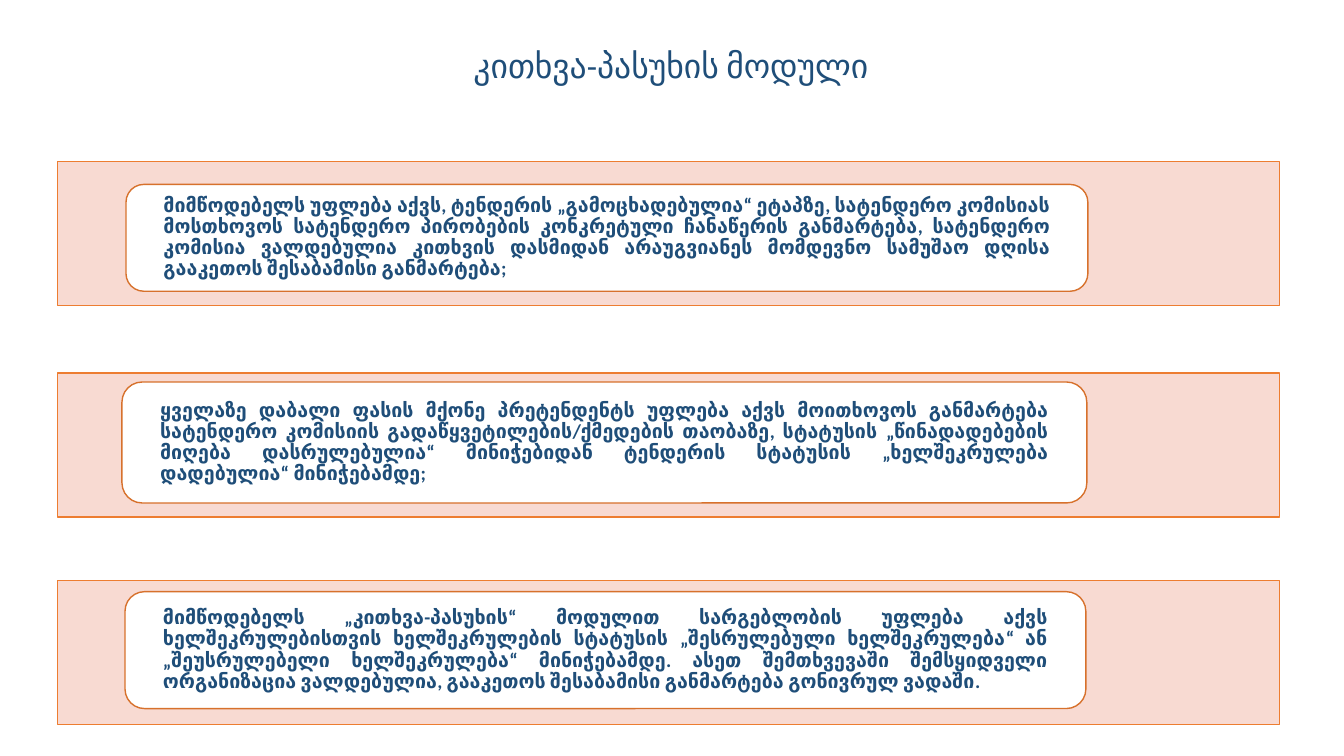
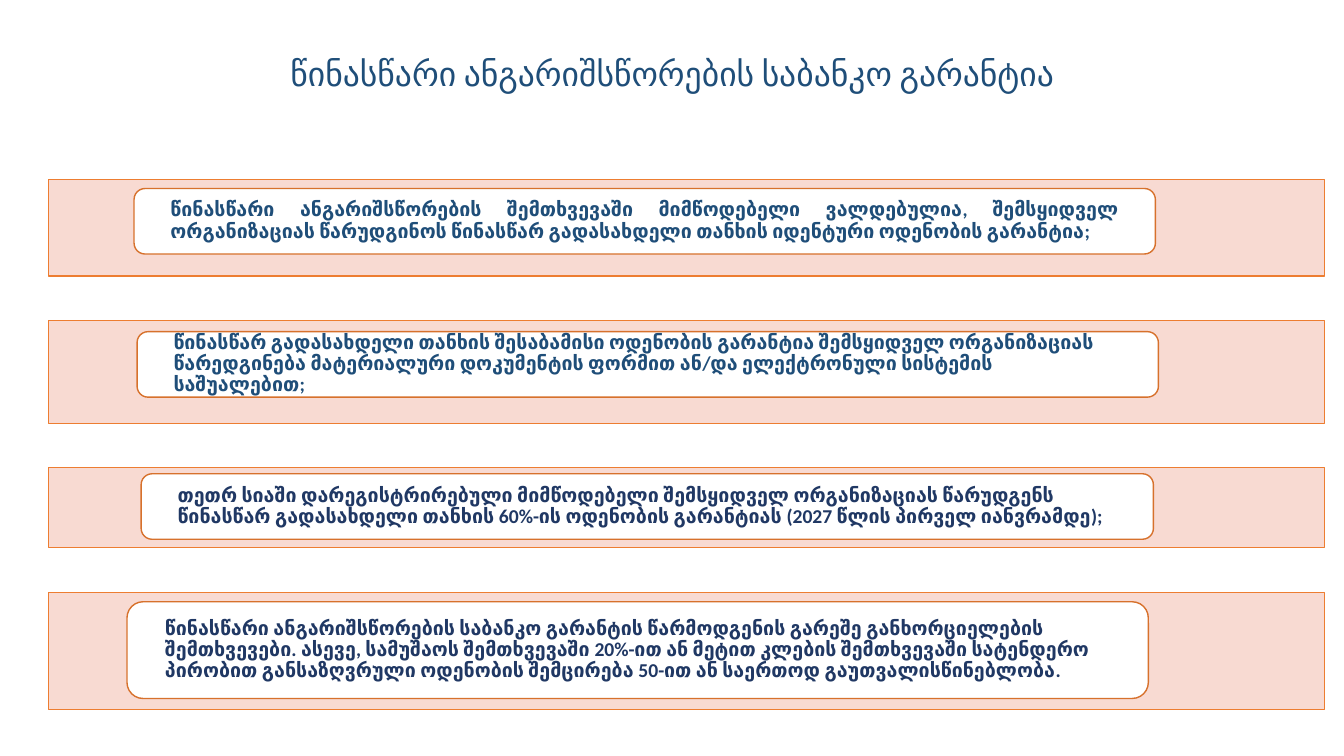
from lxml import etree
from pptx import Presentation
from pptx.dml.color import RGBColor
from pptx.enum import shapes, text
from pptx.oxml.ns import qn
from pptx.util import Inches, Pt

FONT = "Calibri"
NAVY, INDIGO = "1F4E79", "203864"
PEACH, ORANGE, RUST, WHITE = "F8D7CE", "ED7D31", "D7712C", "FFFFFF"
JUSTIFY, LEFT = text.PP_ALIGN.JUSTIFY, text.PP_ALIGN.LEFT
RECT, ROUNDED = shapes.MSO_SHAPE.RECTANGLE, shapes.MSO_SHAPE.ROUNDED_RECTANGLE


def add_panel(slide, kind, box, fill, line):
    panel = slide.shapes.add_shape(kind, *map(Inches, box))
    panel.shadow.inherit = False
    panel.fill.solid()
    panel.fill.fore_color.rgb = RGBColor.from_string(fill)
    panel.line.color.rgb = RGBColor.from_string(line)
    panel.line.width = Pt(1)
    return panel


def write(shape, wording, size, color, align, bold=False):
    frame = shape.text_frame
    frame.word_wrap = True
    frame.vertical_anchor = text.MSO_ANCHOR.MIDDLE
    frame.text = wording
    paragraph = frame.paragraphs[0]
    paragraph.alignment = align
    paragraph.line_spacing = 0.9
    font = paragraph.runs[0].font
    font.name, font.size, font.bold = FONT, Pt(size), bold
    font.color.rgb = RGBColor.from_string(color)


# Each row: band top, band height, card box, text colour, alignment, wording
pages = [
    {
        "title": "კითხვა-პასუხის მოდული",
        "title_box": (0.95, 0.42, 11.41, 0.5),
        "band_left": 0.57, "band_width": 12.12, "inset": 0.32,
        "rows": [
            (1.6, 1.43, (1.25, 1.83, 9.54, 1.06), NAVY, JUSTIFY,
             "მიმწოდებელს უფლება აქვს, ტენდერის „გამოცხადებულია“ ეტაპზე, სატენდერო "
             "კომისიას მოსთხოვოს სატენდერო პირობების კონკრეტული ჩანაწერის განმარტება, "
             "სატენდერო კომისია ვალდებულია კითხვის დასმიდან არაუგვიანეს მომდევნო "
             "სამუშაო დღისა გააკეთოს შესაბამისი განმარტება;"),
            (3.7, 1.43, (1.21, 3.79, 9.57, 1.2), NAVY, JUSTIFY,
             "ყველაზე დაბალი ფასის მქონე პრეტენდენტს უფლება აქვს მოითხოვოს განმარტება "
             "სატენდერო კომისიის გადაწყვეტილების/ქმედების თაობაზე, სტატუსის "
             "„წინადადებების მიღება დასრულებულია“ მინიჭებიდან ტენდერის სტატუსის "
             "„ხელშეკრულება დადებულია“ მინიჭებამდე;"),
            (5.76, 1.43, (1.24, 5.87, 9.53, 1.16), NAVY, JUSTIFY,
             "მიმწოდებელს „კითხვა-პასუხის“ მოდულით სარგებლობის უფლება აქვს "
             "ხელშეკრულებისთვის ხელშეკრულების სტატუსის „შესრულებული ხელშეკრულება“ ან "
             "„შეუსრულებელი ხელშეკრულება“ მინიჭებამდე. ასეთ შემთხვევაში შემსყიდველი "
             "ორგანიზაცია ვალდებულია, გააკეთოს შესაბამისი განმარტება გონივრულ ვადაში."),
        ],
    },
    {
        "title": "წინასწარი ანგარიშსწორების საბანკო გარანტია",
        "title_box": (0.92, 0.45, 11.5, 0.6),
        "band_left": 0.48, "band_width": 12.66, "inset": 0.33,
        "rows": [
            (1.78, 0.96, (1.33, 1.87, 10.13, 0.65), NAVY, JUSTIFY,
             "წინასწარი ანგარიშსწორების შემთხვევაში მიმწოდებელი ვალდებულია, შემსყიდველ "
             "ორგანიზაციას წარუდგინოს წინასწარ გადასახდელი თანხის იდენტური ოდენობის "
             "გარანტია;"),
            (3.18, 1.02, (1.36, 3.29, 10.13, 0.65), NAVY, LEFT,
             "წინასწარ გადასახდელი თანხის შესაბამისი ოდენობის გარანტია შემსყიდველ "
             "ორგანიზაციას წარედგინება მატერიალური დოკუმენტის ფორმით ან/და "
             "ელექტრონული სისტემის საშუალებით;"),
            (4.64, 0.79, (1.4, 4.7, 10.04, 0.65), INDIGO, LEFT,
             "თეთრ სიაში დარეგისტრირებული მიმწოდებელი შემსყიდველ ორგანიზაციას "
             "წარუდგენს წინასწარ გადასახდელი თანხის 60%-ის ოდენობის გარანტიას "
             "(2027 წლის პირველ იანვრამდე);"),
            (5.88, 1.16, (1.26, 5.97, 10.13, 0.96), INDIGO, LEFT,
             "წინასწარი ანგარიშსწორების საბანკო გარანტის წარმოდგენის გარეშე "
             "განხორციელების შემთხვევები. ასევე, სამუშაოს შემთხვევაში 20%-ით ან მეტით "
             "კლების შემთხვევაში სატენდერო პირობით განსაზღვრული ოდენობის შემცირება "
             "50-ით ან საერთოდ გაუთვალისწინებლობა."),
        ],
    },
]

prs = Presentation()
prs.slide_width, prs.slide_height = Inches(13.33), Inches(7.5)

for page in pages:
    slide = prs.slides.add_slide(prs.slide_layouts[6])

    # Title
    title = slide.shapes.add_textbox(*map(Inches, page["title_box"]))
    write(title, page["title"], 24, NAVY, text.PP_ALIGN.CENTER)

    for top, height, card_box, color, align, wording in page["rows"]:
        # Translucent band
        band_box = (page["band_left"], top, page["band_width"], height)
        band = add_panel(slide, RECT, band_box, PEACH, ORANGE)
        band_color = band.fill._xPr.find(qn("a:solidFill"))[0]
        etree.SubElement(band_color, qn("a:alpha"), val="90000")

        # White card with the rule
        card = add_panel(slide, ROUNDED, card_box, WHITE, RUST)
        frame = card.text_frame
        frame.margin_left = frame.margin_right = Inches(page["inset"])
        frame.margin_top = frame.margin_bottom = 0
        write(card, wording, 14, color, align, bold=True)

prs.save("out.pptx")
